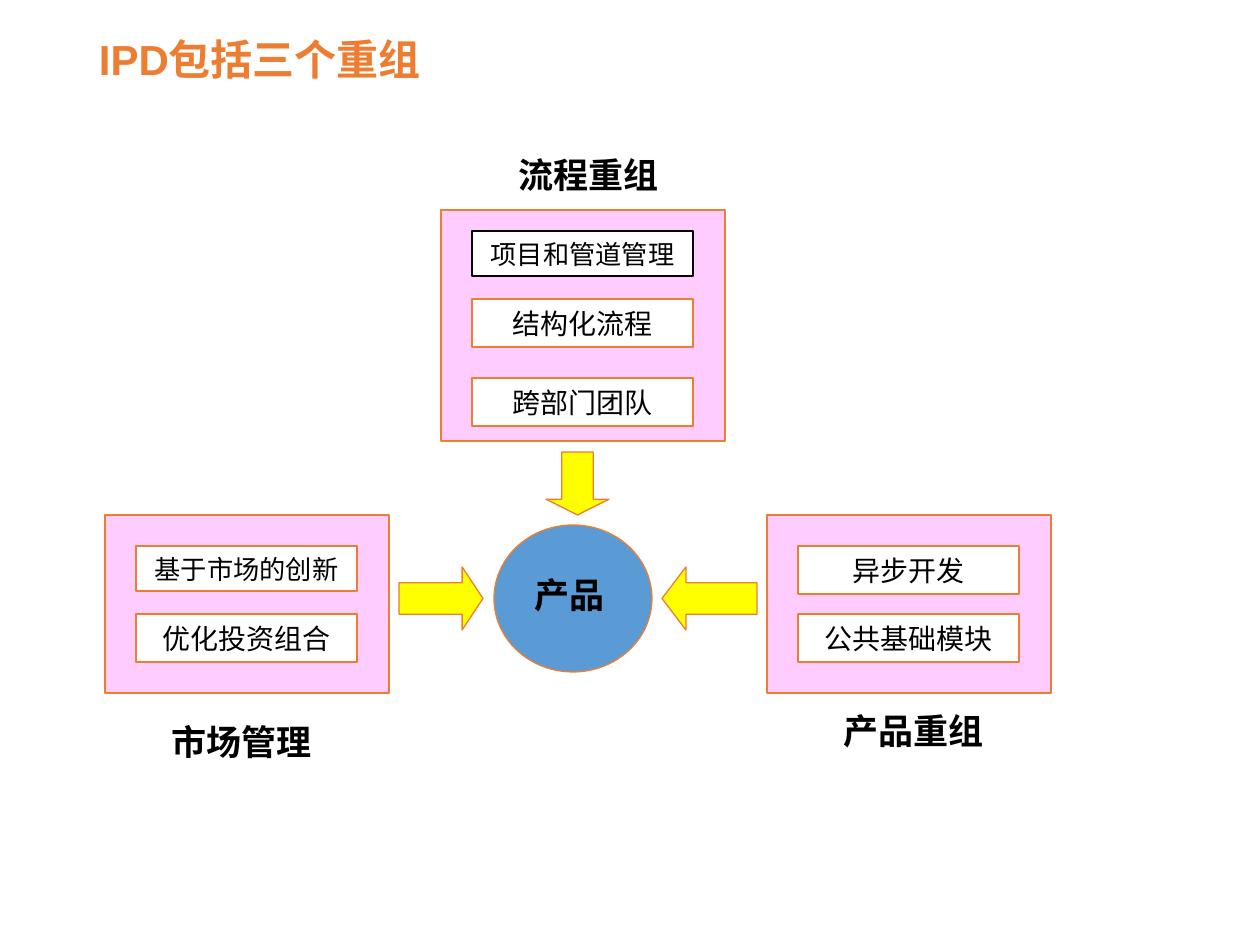
from dataclasses import dataclass

from pptx import Presentation
from pptx.dml.color import RGBColor
from pptx.enum.shapes import MSO_SHAPE
from pptx.enum.text import MSO_ANCHOR, PP_ALIGN
from pptx.oxml.ns import qn
from pptx.util import Emu, Pt


@dataclass(frozen=True)
class Theme:
    """Colours, fonts and type sizes of the slide."""
    accent: str = "ED7D31"
    panel: str = "FFCCFF"
    card: str = "FFFFFF"
    product: str = "5B9BD5"
    arrow: str = "FFFF00"
    ink: str = "000000"
    latin: str = "Arial"
    chinese: str = "Noto Sans CJK SC"
    title_size: int = 24
    title_leading: int = 29
    caption_size: int = 20
    card_size: int = 16
    long_card_size: int = 15
    line_width: float = 0.75


THEME = Theme()
PIXELS_PER_INCH = 126
PANEL_WIDTH = 284
CARD_WIDTH = 221
CARD_INSET = (PANEL_WIDTH - CARD_WIDTH) // 2
LONG_CARD_LENGTH = 7


def px(length):
    """Turn pixels into EMU."""
    return Emu(round(length * 914400 / PIXELS_PER_INCH))


def add_figure(slide, kind, box, fill, line=THEME.accent):
    """Add a filled, outlined preset shape."""
    shape = slide.shapes.add_shape(kind, *map(px, box))
    shape.shadow.inherit = False
    shape.fill.solid()
    shape.fill.fore_color.rgb = RGBColor.from_string(fill)
    shape.line.color.rgb = RGBColor.from_string(line)
    shape.line.width = Pt(THEME.line_width)
    return shape


def write(shape, text, size, color=THEME.ink, bold=False,
          font=THEME.chinese, align=PP_ALIGN.CENTER, inset=0):
    """Write one vertically centred line of text into a shape."""
    frame = shape.text_frame
    frame.word_wrap = True
    frame.vertical_anchor = MSO_ANCHOR.MIDDLE
    frame.margin_left = frame.margin_right = px(inset)
    frame.margin_top = frame.margin_bottom = 0
    paragraph = frame.paragraphs[0]
    paragraph.alignment = align
    run = paragraph.add_run()
    run.text = text
    run.font.size = Pt(size)
    run.font.bold = bold
    run.font.name = font
    run.font.color.rgb = RGBColor.from_string(color)
    east_asian = run._r.get_or_add_rPr().makeelement(
        qn("a:ea"), {"typeface": THEME.chinese})
    run.font._element.find(qn("a:latin")).addnext(east_asian)
    return paragraph


def add_title(slide, text):
    """Add the slide title."""
    box = slide.shapes.add_textbox(px(86), px(27), px(355), px(63))
    paragraph = write(box, text, THEME.title_size, THEME.accent, True,
                      THEME.latin, PP_ALIGN.LEFT, 13)
    paragraph.line_spacing = Pt(THEME.title_leading)


def add_caption(slide, text, left, top, width=189):
    """Add a bold caption."""
    box = slide.shapes.add_textbox(px(left), px(top), px(width), px(54))
    write(box, text, THEME.caption_size, bold=True)


def add_card(slide, text, left, top, line=THEME.accent):
    """Add a white card whose height follows its type size."""
    is_long = len(text) >= LONG_CARD_LENGTH
    size = THEME.long_card_size if is_long else THEME.card_size
    box = (left, top, CARD_WIDTH, 3 * size)
    card = add_figure(slide, MSO_SHAPE.RECTANGLE, box, THEME.card, line)
    write(card, text, size)


def add_panel(slide, left, top, height, cards):
    """Add a pink panel with its cards."""
    add_figure(slide, MSO_SHAPE.RECTANGLE,
               (left, top, PANEL_WIDTH, height), THEME.panel)
    for text, card_top, line in cards:
        add_card(slide, text, left + CARD_INSET, card_top, line)


def add_arrow(slide, kind, box, head):
    """Add a yellow block arrow with a given head length ratio."""
    arrow = add_figure(slide, kind, box, THEME.arrow)
    arrow.adjustments[0] = 0.5
    arrow.adjustments[1] = head


def add_product(slide):
    """Add the central product circle and its label."""
    add_figure(slide, MSO_SHAPE.OVAL, (494, 525, 158, 147), THEME.product)
    add_caption(slide, "产品", 496, 567, 147)


def main():
    """Build and save the slide."""
    presentation = Presentation()
    presentation.slide_width, presentation.slide_height = px(1260), px(945)
    slide = presentation.slides.add_slide(presentation.slide_layouts[6])
    add_title(slide, "IPD包括三个重组")

    add_panel(slide, 441, 210, 231, [
        ("项目和管道管理", 231, THEME.ink),
        ("结构化流程", 299, THEME.accent),
        ("跨部门团队", 378, THEME.accent)])
    add_panel(slide, 105, 515, 178, [
        ("基于市场的创新", 546, THEME.accent),
        ("优化投资组合", 614, THEME.accent)])
    add_panel(slide, 767, 515, 178, [
        ("异步开发", 546, THEME.accent),
        ("公共基础模块", 614, THEME.accent)])

    add_caption(slide, "流程重组", 494, 147)
    add_caption(slide, "市场管理", 147, 714)
    add_caption(slide, "产品重组", 819, 703)

    add_product(slide)
    add_arrow(slide, MSO_SHAPE.RIGHT_ARROW, (399, 567, 84, 63), 0.33)
    add_arrow(slide, MSO_SHAPE.LEFT_ARROW, (662, 567, 95, 63), 0.38)
    add_arrow(slide, MSO_SHAPE.DOWN_ARROW, (546, 452, 63, 63), 0.25)
    presentation.save("out.pptx")


if __name__ == "__main__":
    main()
